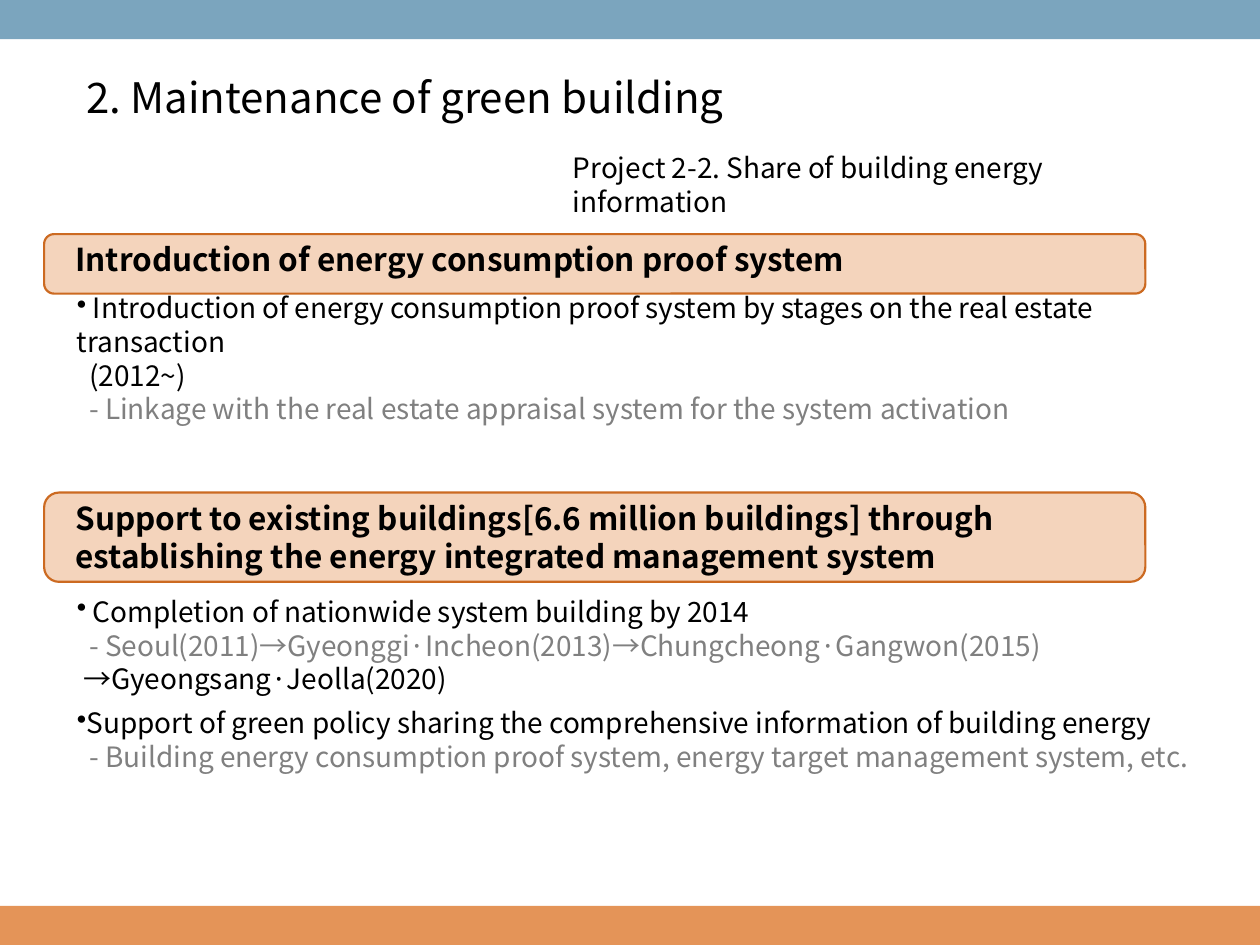
from dataclasses import dataclass

from lxml.etree import SubElement
from pptx import Presentation
from pptx.dml.color import RGBColor
from pptx.enum.shapes import MSO_SHAPE as Preset
from pptx.enum.text import MSO_ANCHOR as Anchor
from pptx.oxml.ns import qn
from pptx.util import Cm, Pt

FONT = "Noto Sans CJK KR"
BLACK, GREY = "000000", "808080"
BLUE, ORANGE = "7BA5BE", "E49458"
PEACH, RUST = "F4D4BC", "CC6A21"
LINE_HEIGHT = 1.2
SLIDE_WIDTH, SLIDE_HEIGHT, BAND_HEIGHT = 25.4, 19.05, 0.79


@dataclass
class Box:
    """Position and size in centimetres."""
    left: float
    top: float
    width: float
    height: float

    def lengths(self) -> list:
        return [Cm(n) for n in (self.left, self.top, self.width, self.height)]


@dataclass
class Line:
    text: str
    size: float = 16
    color: str = BLACK
    bold: bool = False
    bullet: bool = False
    indent: float = 0
    space_before: float = 0


def rgb(color: str) -> RGBColor:
    return RGBColor.from_string(color)


def add_panel(slide, preset, box: Box, fill: str, outline: str = "") -> None:
    shape = slide.shapes.add_shape(preset, *box.lengths())
    shape.shadow.inherit = False
    shape.fill.solid()
    shape.fill.fore_color.rgb = rgb(fill)
    if outline:
        shape.line.color.rgb = rgb(outline)
        shape.line.width = Pt(1.25)
    else:
        shape.line.fill.background()


def write_line(paragraph, line: Line) -> None:
    paragraph.line_spacing = Pt(line.size * LINE_HEIGHT)
    paragraph.space_before = Pt(line.space_before)
    properties = paragraph._p.get_or_add_pPr()
    properties.set("marL", str(Cm(line.indent)))
    properties.set("indent", "0")
    if line.bullet:
        SubElement(properties, qn("a:buChar"), char="•")
    run = paragraph.add_run()
    run.text = line.text
    run.font.name = FONT
    run.font.size = Pt(line.size)
    run.font.bold = line.bold
    run.font.color.rgb = rgb(line.color)
    SubElement(run._r.get_or_add_rPr(), qn("a:ea"), typeface=FONT)


def add_text(slide, box: Box, lines: list[Line], anchor=Anchor.TOP) -> None:
    frame = slide.shapes.add_textbox(*box.lengths()).text_frame
    frame.word_wrap = True
    frame.vertical_anchor = anchor
    for index, line in enumerate(lines):
        paragraph = frame.add_paragraph() if index else frame.paragraphs[0]
        write_line(paragraph, line)


def add_heading(slide, top: float, height: float, text: str) -> None:
    add_panel(slide, Preset.ROUNDED_RECTANGLE, Box(0.89, top, 22.2, height), PEACH, RUST)
    add_text(slide, Box(1.27, top, 22.86, height), [Line(text, size=18, bold=True)])


def detail(text: str) -> Line:
    return Line(text, color=GREY, indent=0.25)


def main() -> None:
    presentation = Presentation()
    presentation.slide_width, presentation.slide_height = Cm(SLIDE_WIDTH), Cm(SLIDE_HEIGHT)
    slide = presentation.slides.add_slide(presentation.slide_layouts[6])

    for top, color in ((SLIDE_HEIGHT - BAND_HEIGHT, ORANGE), (0, BLUE)):
        add_panel(slide, Preset.RECTANGLE, Box(0, top, SLIDE_WIDTH, BAND_HEIGHT), color)

    add_text(slide, Box(1.3, 0.99, 23.77, 1.93),
             [Line("2. Maintenance of green building", size=24, indent=0.19)], Anchor.MIDDLE)
    add_text(slide, Box(11.3, 2.92, 12.8, 0.94),
             [Line("Project 2-2. Share of building energy information")])

    add_heading(slide, 4.72, 1.2, "Introduction of energy consumption proof system")
    add_text(slide, Box(1.3, 5.74, 23.6, 3.07), [
        Line(" Introduction of energy consumption proof system by stages "
             "on the real estate transaction", bullet=True),
        Line("(2012~)", indent=0.25),
        detail("- Linkage with the real estate appraisal system for the system activation"),
    ])

    add_heading(slide, 9.93, 1.8, "Support to existing buildings[6.6 million buildings] through "
                                  "establishing the energy integrated management system")
    add_text(slide, Box(1.3, 11.86, 23.6, 3.89), [
        Line(" Completion of nationwide system building by 2014", bullet=True),
        detail("- Seoul(2011)→Gyeonggi·Incheon(2013)→Chungcheong·Gangwon(2015)"),
        Line("→Gyeongsang·Jeolla(2020)", indent=0.13),
        Line("Support of green policy sharing the comprehensive information of building energy",
             bullet=True, space_before=6),
        detail("- Building energy consumption proof system, energy target management system, etc."),
    ])

    presentation.save("out.pptx")


if __name__ == "__main__":
    main()
